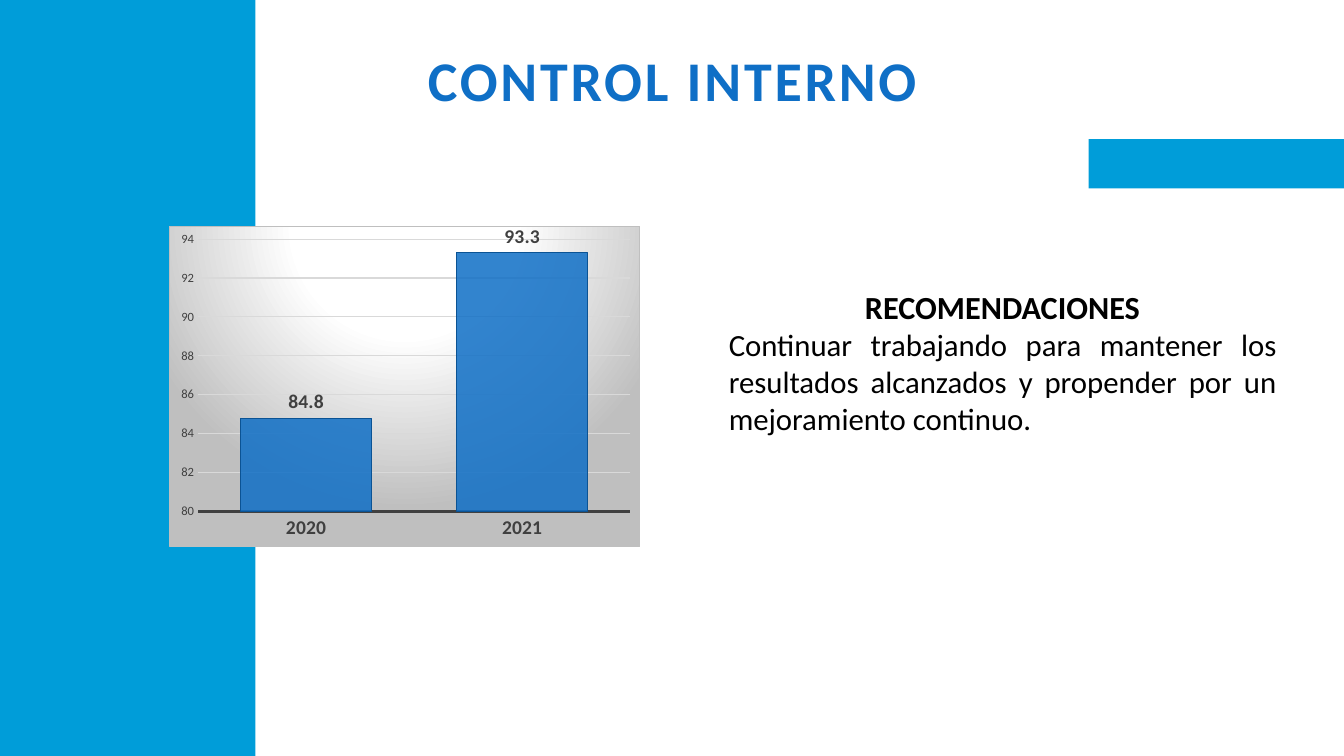
import lxml.etree
import pptx
import pptx.chart.data
import pptx.dml.color
import pptx.enum.chart
import pptx.enum.shapes
import pptx.enum.text
import pptx.oxml
import pptx.oxml.ns
import pptx.util

W, H = 13.33, 7.5
FONT = "Calibri"
COLORS = {
    "band": "009DD9", "accent": "0F6FC6", "bar_line": "0B5394",
    "text": "000000", "axis": "404040", "grid": "D9D9D9",
    "light": "FFFFFF", "shade": "BFBFBF",
}
ALIGN = pptx.enum.text.PP_ALIGN
qn = pptx.oxml.ns.qn


def rgb(name):
    return pptx.dml.color.RGBColor.from_string(COLORS[name])


def inches(box):
    return [pptx.util.Inches(v) for v in box]


def set_font(font, size, color, bold=False):
    font.name = FONT
    font.size = pptx.util.Pt(size)
    font.bold = bold
    font.color.rgb = rgb(color)


def set_line(line, color, width):
    line.color.rgb = rgb(color)
    line.width = pptx.util.Pt(width)


def add_band(s, box):
    sp = s.shapes.add_shape(pptx.enum.shapes.MSO_SHAPE.RECTANGLE, *inches(box))
    sp.shadow.inherit = False
    sp.fill.solid()
    sp.fill.fore_color.rgb = rgb("band")
    sp.line.fill.background()


def add_run(p, text, size, color, bold, align):
    p.alignment = align
    r = p.add_run()
    r.text = text
    set_font(r.font, size, color, bold)
    return r


def add_title(s, box, text):
    tf = s.shapes.add_textbox(*inches(box)).text_frame
    tf.word_wrap = True
    tf.vertical_anchor = pptx.enum.text.MSO_ANCHOR.MIDDLE
    tf.margin_left = tf.margin_right = pptx.util.Inches(0.2)
    tf.margin_top = tf.margin_bottom = pptx.util.Inches(0.2)
    p = tf.paragraphs[0]
    p.line_spacing = 0.9
    r = add_run(p, text, 40, "accent", True, ALIGN.CENTER)
    r.font._element.set("spc", "200")  # letter spacing of 2 pt


def add_advice(s, box, heading, body):
    tf = s.shapes.add_textbox(*inches(box)).text_frame
    tf.word_wrap = True
    tf.auto_size = pptx.enum.text.MSO_AUTO_SIZE.SHAPE_TO_FIT_TEXT
    add_run(tf.paragraphs[0], heading, 23, "text", True, ALIGN.CENTER)
    add_run(tf.add_paragraph(), body, 22, "text", False, ALIGN.JUSTIFY)


def shade_chart(chart):
    """Radial gradient and thin border behind the whole chart."""
    stops = "".join(
        f'<a:gs pos="{pos * 1000}"><a:srgbClr val="{COLORS[c]}"/></a:gs>'
        for pos, c in ((0, "light"), (39, "light"), (100, "shade")))
    sp_pr = pptx.oxml.parse_xml(
        f'<c:spPr {pptx.oxml.ns.nsdecls("c", "a")}><a:gradFill><a:gsLst>{stops}</a:gsLst>'
        '<a:path path="circle"><a:fillToRect l="50000" t="-80000" r="50000" b="180000"/></a:path>'
        f'</a:gradFill><a:ln w="9525"><a:solidFill><a:srgbClr val="{COLORS["shade"]}"/>'
        '</a:solidFill></a:ln></c:spPr>')
    chart._chartSpace.find(qn("c:chart")).addnext(sp_pr)


def place_plot(chart, **shares):
    """Fix the inner plot area as shares of the chart's size."""
    area = chart._chartSpace.find(".//" + qn("c:plotArea"))
    for old in area.findall(qn("c:layout")):
        area.remove(old)
    parts = {"layoutTarget": "inner", "xMode": "edge", "yMode": "edge", **shares}
    tags = "".join(f'<c:{k} val="{v}"/>' for k, v in parts.items())
    area.insert(0, pptx.oxml.parse_xml(
        f'<c:layout {pptx.oxml.ns.nsdecls("c")}><c:manualLayout>{tags}</c:manualLayout></c:layout>'))


def add_score_chart(s, box, scores):
    data = pptx.chart.data.CategoryChartData(number_format="0.0")
    data.categories = list(scores)
    data.add_series("Series 1", list(scores.values()))
    enums = pptx.enum.chart
    chart = s.shapes.add_chart(
        enums.XL_CHART_TYPE.COLUMN_CLUSTERED, *inches(box), data).chart
    chart.has_legend = chart.has_title = False
    set_font(chart.font, 10, "text")
    shade_chart(chart)
    place_plot(chart, x=0.06, y=0.04, w=0.92, h=0.85)

    # Axes
    years, values = chart.category_axis, chart.value_axis
    for axis in (years, values):
        axis.major_tick_mark = axis.minor_tick_mark = enums.XL_TICK_MARK.NONE
    set_font(years.tick_labels.font, 14, "axis", True)
    set_line(years.format.line, "axis", 1.5)
    set_font(values.tick_labels.font, 9, "axis")
    values.tick_labels.number_format = "0"
    values.tick_labels.number_format_is_linked = False
    values.minimum_scale, values.maximum_scale, values.major_unit = 80, 94, 2
    values.format.line.fill.background()
    set_line(values.major_gridlines.format.line, "grid", 0.75)

    # Columns and their labels
    plot = chart.plots[0]
    plot.gap_width = 65
    plot.vary_by_categories = False
    series = plot.series[0]
    series.format.fill.solid()
    series.format.fill.fore_color.rgb = rgb("accent")
    color = series._element.find(".//" + qn("a:srgbClr"))
    lxml.etree.SubElement(color, qn("a:alpha")).set("val", "85000")
    set_line(series.format.line, "bar_line", 0.75)
    labels = series.data_labels
    labels.show_value = True
    labels.number_format = "0.0"
    labels.number_format_is_linked = False
    labels.position = enums.XL_LABEL_POSITION.OUTSIDE_END
    set_font(labels.font, 14, "axis", True)


def build_slide(prs):
    s = prs.slides.add_slide(prs.slide_layouts[6])
    band = 0.19 * W
    add_band(s, (0, 0, band, H))
    add_band(s, (W - band, 1.38, band, 0.49))
    add_title(s, (2.34, 0.36, 8.66, 0.93), "CONTROL INTERNO")
    add_score_chart(s, (1.68, 2.23, 4.67, 3.2), {"2020": 84.8, "2021": 93.3})
    add_advice(s, (7.13, 2.8, 5.63, 1.6), "RECOMENDACIONES",
               "Continuar trabajando para mantener los resultados alcanzados "
               "y propender por un mejoramiento continuo.")


def main():
    prs = pptx.Presentation()
    prs.slide_width, prs.slide_height = inches((W, H))
    build_slide(prs)
    prs.save("out.pptx")


if __name__ == "__main__":
    main()
